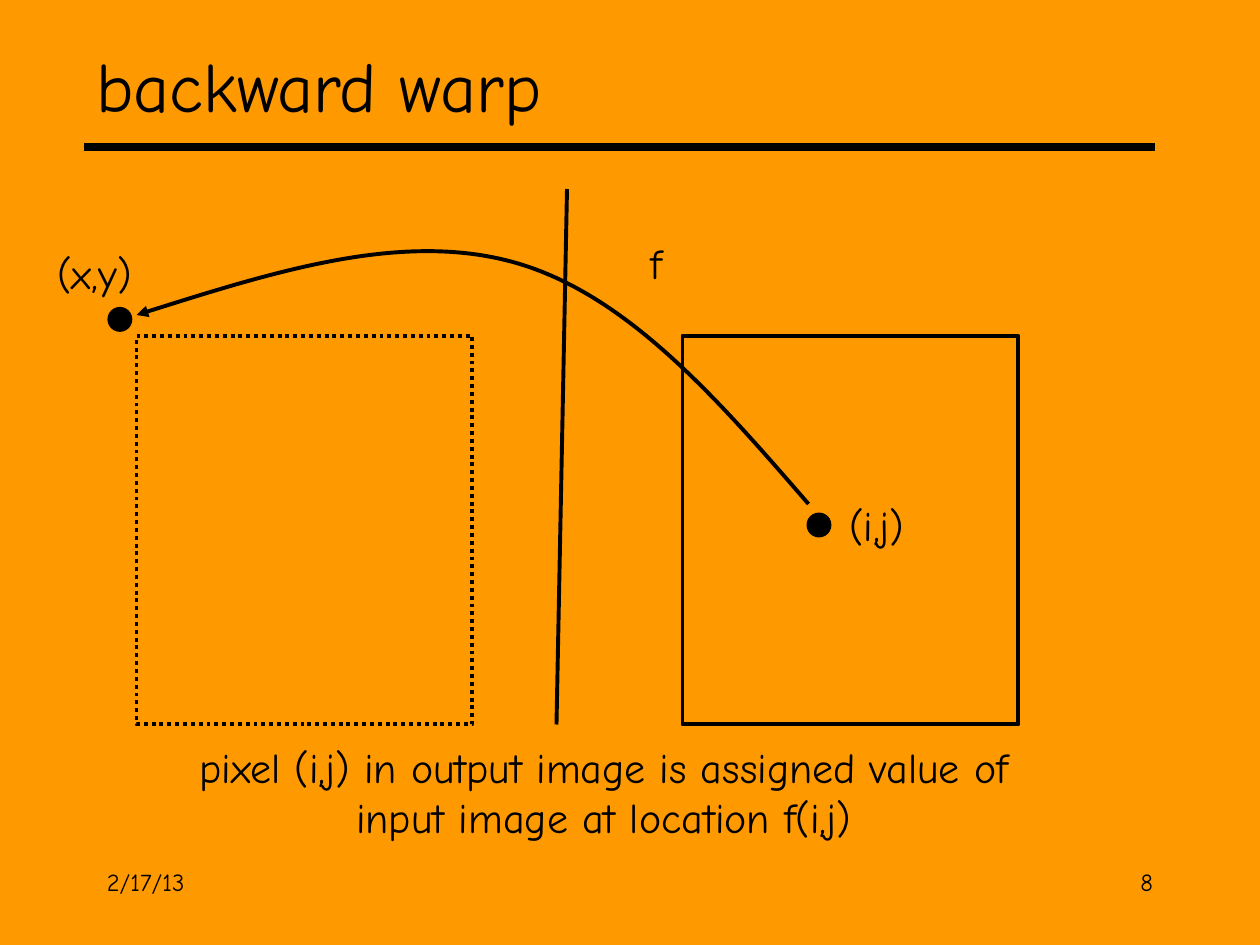
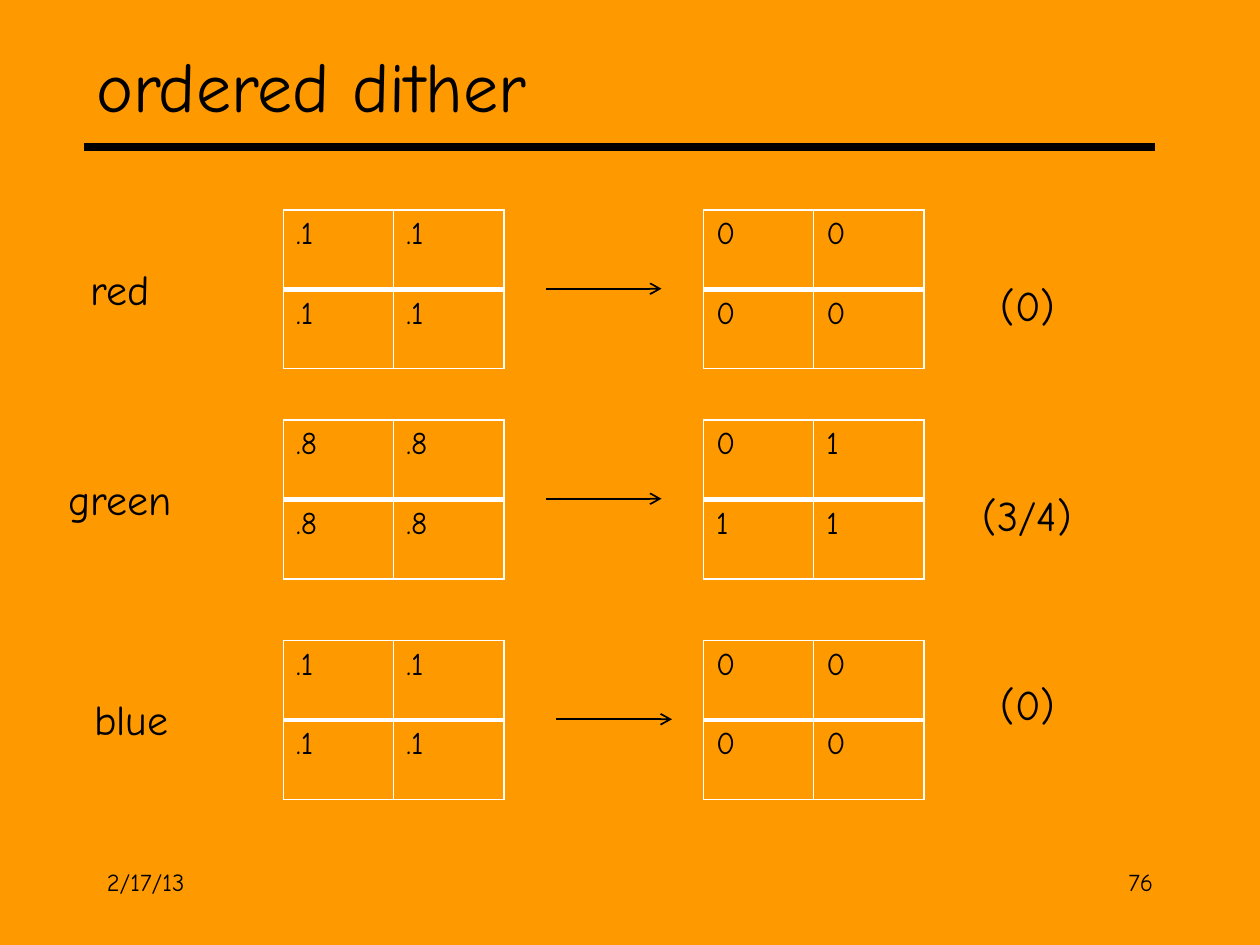
from dataclasses import dataclass
from itertools import product
from typing import NamedTuple

from lxml.etree import SubElement
from pptx import Presentation
from pptx.dml.color import RGBColor as Color
from pptx.enum.dml import MSO_LINE_DASH_STYLE as Dash
from pptx.enum.shapes import MSO_CONNECTOR_TYPE as Link
from pptx.enum.shapes import MSO_AUTO_SHAPE_TYPE as Form
from pptx.enum.text import MSO_VERTICAL_ANCHOR as Anchor
from pptx.enum.text import PP_PARAGRAPH_ALIGNMENT as Align
from pptx.oxml.ns import qn
from pptx.util import Pt


@dataclass(frozen=True)
class Theme:
    back: Color = Color(0xFF, 0x99, 0x00)
    ink: Color = Color(0, 0, 0)
    grid: Color = Color(0xFF, 0xFF, 0xFF)
    font: str = "Comic Neue"
    title: int = 40
    body: int = 24
    cell: int = 18
    foot: int = 14
    rule: float = 4.5
    stroke: float = 2.25
    thin: float = 1
    thick: float = 3


THEME = Theme()


class Box(NamedTuple):
    left: float
    top: float
    width: float
    height: float

    def lengths(self) -> list:
        return [Pt(n) for n in self]


class Label(NamedTuple):
    text: str
    box: Box
    size: int = THEME.body
    align: Align = Align.CENTER
    anchor: Anchor = Anchor.TOP
    indent: float = 0


class Line(NamedTuple):
    start: tuple
    end: tuple
    weight: float = THEME.stroke
    head: str = ""


class Band(NamedTuple):
    name: str
    source: str
    result: str
    share: str
    top: float
    name_box: tuple
    share_box: tuple
    arrow: float = 312


FRAMES = [
    (Box(78, 192, 192, 222), Dash.ROUND_DOT),
    (Box(390, 192, 192, 222), Dash.SOLID),
]
DOTS = [Box(462, 294, 12, 12), Box(62.5, 176.5, 12, 12)]
CURVE = [(462, 288), (410, 228), (358, 168), (294, 150),
         (230, 132), (154, 156), (78, 180)]
NOTES = [
    Label("(i,j)", Box(462, 282, 78, 36)),
    Label("(x,y)", Box(0, 138, 108, 36)),
    Label("f", Box(354, 132, 42, 36)),
    Label("pixel (i,j) in output image is assigned value of "
          "input image at location f(i,j)",
          Box(54, 420, 546, 65), indent=36),
]
BANDS = [
    Band("red", ".1 .1 .1 .1", "0 0 0 0", "(0)", 120,
         (42, 27, 53, 37), (564, 36, 47, 37)),
    Band("green", ".8 .8 .8 .8", "0 1 1 1", "(3/4)", 240,
         (29.5, 27, 78, 37), (550, 36, 74, 37)),
    Band("blue", ".1 .1 .1 .1", "0 0 0 0", "(0)", 366,
         (44.5, 27, 61, 37), (564, 18, 47, 37), 318),
]
SIDE, ROW = 63, 45.36


def put_run(para, text: str, size: int) -> None:
    run = para.add_run()
    run.text = text
    run.font.size = Pt(size)
    run.font.name = THEME.font
    run.font.color.rgb = THEME.ink


def add_label(slide, label: Label) -> None:
    frame = slide.shapes.add_textbox(*label.box.lengths()).text_frame
    frame.word_wrap = True
    frame.vertical_anchor = label.anchor
    para = frame.paragraphs[0]
    para.alignment = label.align
    if label.indent:
        props = para._p.get_or_add_pPr()
        props.set("marL", str(Pt(label.indent)))
    put_run(para, label.text, label.size)


def set_ink(line, weight: float) -> None:
    line.color.rgb = THEME.ink
    line.width = Pt(weight)


def add_head(line, kind: str) -> None:
    SubElement(line._get_or_add_ln(), qn("a:tailEnd"), type=kind)


def add_line(slide, item: Line) -> None:
    ends = [Pt(n) for n in item.start + item.end]
    link = slide.shapes.add_connector(Link.STRAIGHT, *ends)
    set_ink(link.line, item.weight)
    SubElement(link._element.spPr, qn("a:effectLst"))
    if item.head:
        add_head(link.line, item.head)


def add_form(slide, form: Form, box: Box, solid: bool):
    shape = slide.shapes.add_shape(form, *box.lengths())
    shape.shadow.inherit = False
    if solid:
        shape.fill.solid()
        shape.fill.fore_color.rgb = THEME.ink
    else:
        shape.fill.background()
    set_ink(shape.line, THEME.stroke)
    return shape


def add_curve(slide, points: list) -> None:
    spots = [(Pt(x), Pt(y)) for x, y in points]
    pen = slide.shapes.build_freeform(*spots[0])
    pen.add_line_segments(spots[1:], close=False)
    shape = pen.convert_to_shape()
    legs = list(shape._element.iter(qn("a:lnTo")))
    for first in range(0, len(legs), 3):
        bend = SubElement(legs[first].getparent(), qn("a:cubicBezTo"))
        for leg in legs[first:first + 3]:
            bend.append(leg[0])
            leg.getparent().remove(leg)
    shape.shadow.inherit = False
    shape.fill.background()
    set_ink(shape.line, THEME.stroke)
    add_head(shape.line, "triangle")


def add_edge(props, side: str, weight: float) -> None:
    edge = SubElement(props, qn(f"a:ln{side}"), w=str(Pt(weight)))
    fill = SubElement(edge, qn("a:solidFill"))
    SubElement(fill, qn("a:srgbClr"), val=str(THEME.grid))


def add_grid(slide, left: float, top: float, values: str) -> None:
    box = Box(left, top, 2 * SIDE, 2 * ROW)
    table = slide.shapes.add_table(2, 2, *box.lengths()).table
    table.first_row = table.horz_banding = False
    for (row, col), value in zip(product(range(2), repeat=2), values.split()):
        cell = table.cell(row, col)
        inner = "B" if row == 0 else "T"
        for side in "LRTB":
            weight = THEME.thick if side == inner else THEME.thin
            add_edge(cell._tc.get_or_add_tcPr(), side, weight)
        cell.fill.background()
        para = cell.text_frame.paragraphs[0]
        para.alignment = Align.LEFT
        put_run(para, value, THEME.cell)


def add_slide(deck, title: str, page: str):
    slide = deck.slides.add_slide(deck.slide_layouts[6])
    slide.background.fill.solid()
    slide.background.fill.fore_color.rgb = THEME.back
    add_line(slide, Line((48, 84), (660, 84), THEME.rule))
    for label in (
        Label(title, Box(48, 18, 612, 60), THEME.title, Align.LEFT,
              Anchor.MIDDLE),
        Label("2/17/13", Box(54, 492, 150, 36), THEME.foot, Align.LEFT),
        Label(page, Box(516, 492, 150, 36), THEME.foot, Align.RIGHT),
    ):
        add_label(slide, label)
    return slide


def draw_warp(deck) -> None:
    slide = add_slide(deck, "backward warp", "8")
    for box, dash in FRAMES:
        frame = add_form(slide, Form.RECTANGLE, box, False)
        frame.line.dash_style = dash
    add_curve(slide, CURVE)
    for box in DOTS:
        add_form(slide, Form.OVAL, box, True)
    for note in NOTES:
        add_label(slide, note)
    add_line(slide, Line((324, 108), (318, 414)))


def draw_dither(deck) -> None:
    slide = add_slide(deck, "ordered dither", "76")
    for band in BANDS:
        add_grid(slide, 162, band.top, band.source)
        add_grid(slide, 402, band.top, band.result)
        mid = band.top + 45
        add_line(slide, Line((band.arrow, mid), (band.arrow + 66, mid),
                             THEME.thin, "arrow"))
        for text, spot in ((band.name, band.name_box),
                           (band.share, band.share_box)):
            left, drop, width, height = spot
            box = Box(left, band.top + drop, width, height)
            add_label(slide, Label(text, box))


def main() -> None:
    deck = Presentation()
    deck.slide_width, deck.slide_height = Pt(720), Pt(540)
    draw_warp(deck)
    draw_dither(deck)
    deck.save("out.pptx")


if __name__ == "__main__":
    main()
